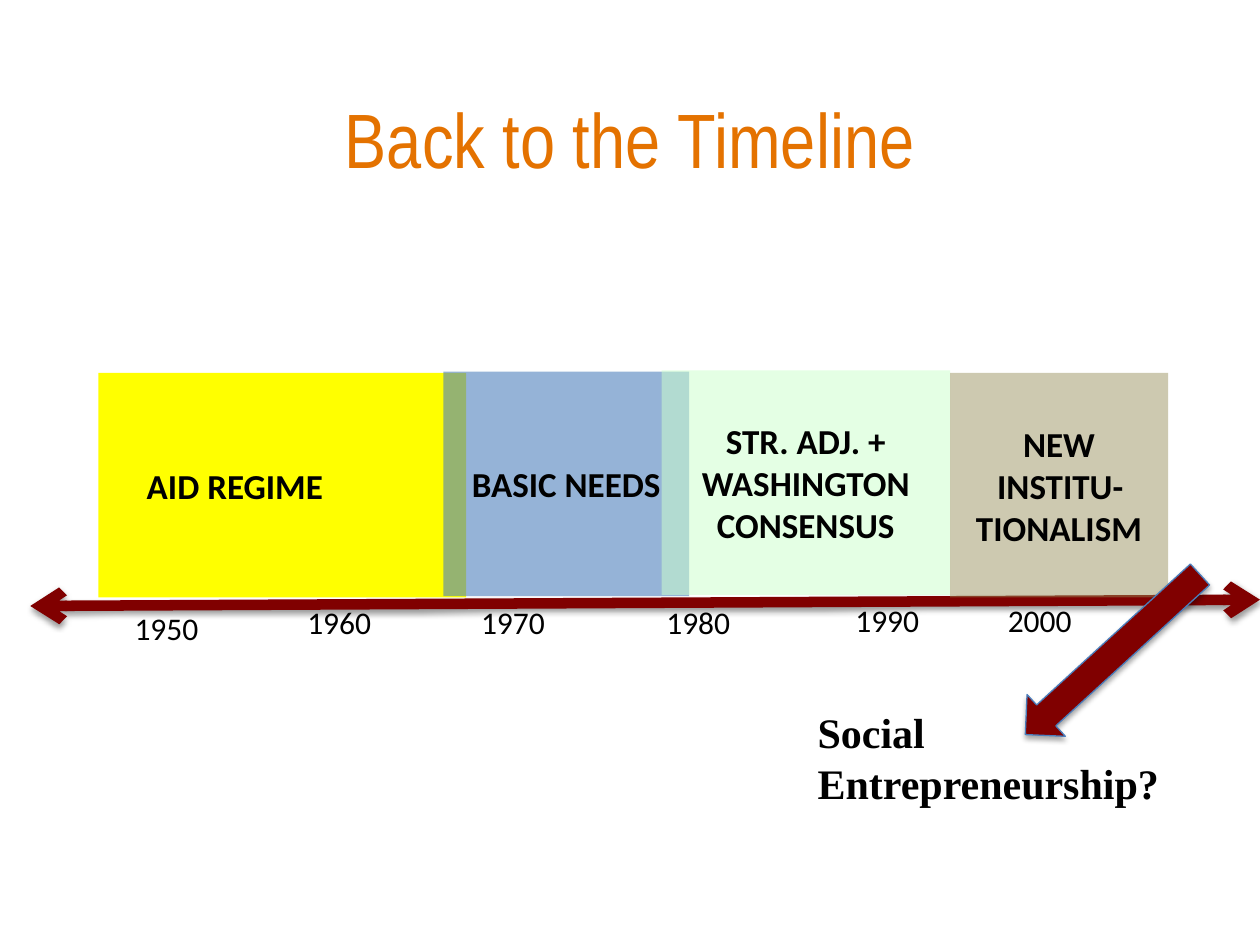
from lxml import etree
from pptx import Presentation
from pptx.dml.color import RGBColor
from pptx.enum.shapes import MSO_CONNECTOR, MSO_SHAPE
from pptx.enum.text import MSO_ANCHOR, PP_ALIGN
from pptx.oxml.ns import qn
from pptx.util import Pt

RECTANGLE, RIGHT_ARROW = MSO_SHAPE.RECTANGLE, MSO_SHAPE.RIGHT_ARROW
STRAIGHT = MSO_CONNECTOR.STRAIGHT
LEFT, CENTER, MIDDLE = PP_ALIGN.LEFT, PP_ALIGN.CENTER, MSO_ANCHOR.MIDDLE

COLORS = {
    "title": "E47200", "text": "000000", "maroon": "800000", "outline": "4B7EBC",
    "yellow": "FFFF00", "blue": "4F81BD", "green": "CCFFCC", "tan": "948A54",
}
TITLE = "Back to the Timeline"
QUESTION = "Social Entrepreneurship?"
# label, left, top, width, color, opacity %, right inset
ERAS = [
    ("AID REGIME", 56.2, 213.1, 210.2, "yellow", 100, 61.2),
    ("BASIC NEEDS", 253.4, 212.4, 140.4, "blue", 60, 7.2),
    ("STR. ADJ. + WASHINGTON CONSENSUS", 378, 211.7, 164.9, "green", 53, 7.2),
    ("NEW INSTITU-TIONALISM", 542.9, 213.1, 124.6, "tan", 46, 7.2),
]
ERA_HEIGHT = 128.2
# year, left, top
YEARS = [
    ("1950", 69.8, 344.2), ("1960", 168.5, 341.3), ("1970", 267.8, 341.3),
    ("1980", 373.7, 341.3), ("1990", 481.7, 339.8), ("2000", 568.8, 339.8),
]


def color(name):
    return RGBColor.from_string(COLORS[name])


def write(shape, text, font, size, bold=False, alignment=LEFT, ink="text"):
    shape.text_frame.word_wrap = True
    paragraph = shape.text_frame.paragraphs[0]
    paragraph.text = text
    paragraph.alignment = alignment
    paragraph.font.name = font
    paragraph.font.size = Pt(size)
    paragraph.font.bold = bold
    paragraph.font.color.rgb = color(ink)


def add_label(slide, box, *style):
    write(slide.shapes.add_textbox(*map(Pt, box)), *style)


def add_box(slide, kind, box, fill):
    shape = slide.shapes.add_shape(kind, *map(Pt, box))
    shape.shadow.inherit = False
    shape.fill.solid()
    shape.fill.fore_color.rgb = color(fill)
    shape.line.fill.background()
    return shape


def set_opacity(shape, percent):
    rgb = shape.fill._xPr.find(qn("a:solidFill"))[0]
    etree.SubElement(rgb, qn("a:alpha"), val=str(percent * 1000))


def add_shadow(shape, opacity, distance):
    properties = shape._element.spPr
    effects = properties.find(qn("a:effectLst"))
    if effects is None:
        effects = etree.SubElement(properties, qn("a:effectLst"))
    shadow = etree.SubElement(
        effects, qn("a:outerShdw"), blurRad=str(Pt(3.1)), dist=str(Pt(distance)),
        dir="5400000", rotWithShape="0")
    black = etree.SubElement(shadow, qn("a:srgbClr"), val="000000")
    etree.SubElement(black, qn("a:alpha"), val=str(opacity * 1000))


def main():
    presentation = Presentation()
    presentation.slide_width, presentation.slide_height = Pt(720), Pt(540)
    slide = presentation.slides.add_slide(presentation.slide_layouts[5])

    # Title
    title = slide.shapes.title
    title.left, title.top, title.width, title.height = map(Pt, (36, 33.8, 648, 90))
    title.text_frame.vertical_anchor = MIDDLE
    write(title, TITLE, "Arial Narrow", 44, False, CENTER, "title")

    # Time axis with arrowheads at both ends
    axis = slide.shapes.add_connector(STRAIGHT, *map(Pt, (17.3, 346.3, 720, 342.7)))
    axis.line.color.rgb = color("maroon")
    axis.line.width = Pt(6)
    for end in ("a:headEnd", "a:tailEnd"):
        etree.SubElement(axis.line._get_or_add_ln(), qn(end), type="arrow")
    add_shadow(axis, 38, 1.6)

    # Years
    for year, left, top in YEARS:
        add_label(slide, (left, top, 61.2, 28.8), year, "Calibri", 18)

    # Overlapping eras
    for label, left, top, width, fill, opacity, inset in ERAS:
        era = add_box(slide, RECTANGLE, (left, top, width, ERA_HEIGHT), fill)
        if opacity < 100:
            set_opacity(era, opacity)
        era.text_frame.margin_right = Pt(inset)
        era.text_frame.vertical_anchor = MIDDLE
        write(era, label, "Calibri", 20, True, CENTER)

    # Question and the arrow leading to it
    add_label(slide, (460.1, 400.3, 255.6, 65.5), QUESTION, "Times New Roman", 24, True)
    arrow = add_box(slide, RIGHT_ARROW, (568.1, 357.8, 135.4, 32.4), "maroon")
    arrow.rotation = 137.5
    arrow.line.color.rgb = color("outline")
    arrow.line.width = Pt(0.75)
    add_shadow(arrow, 35, 1.8)

    presentation.save("out.pptx")


if __name__ == "__main__":
    main()
